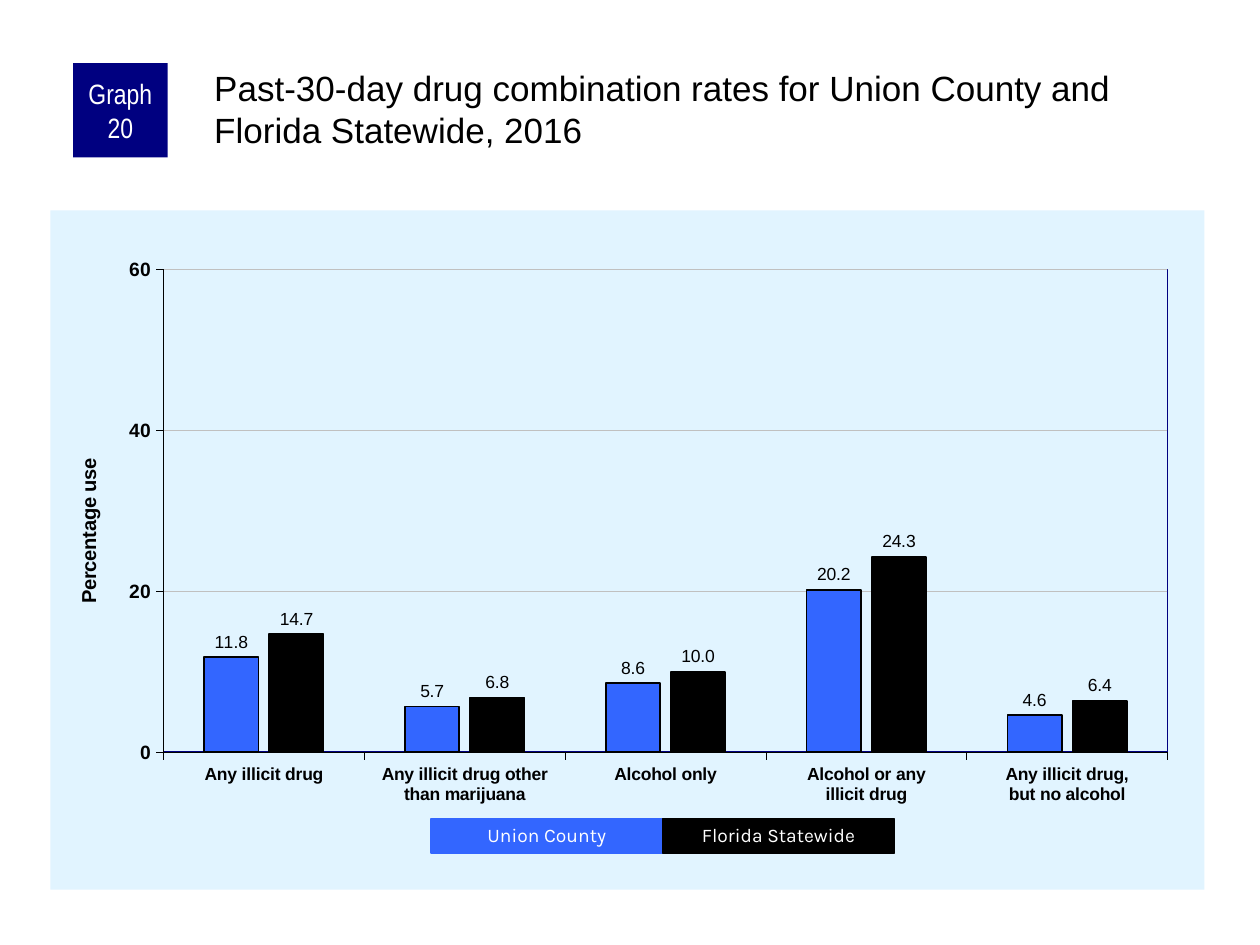
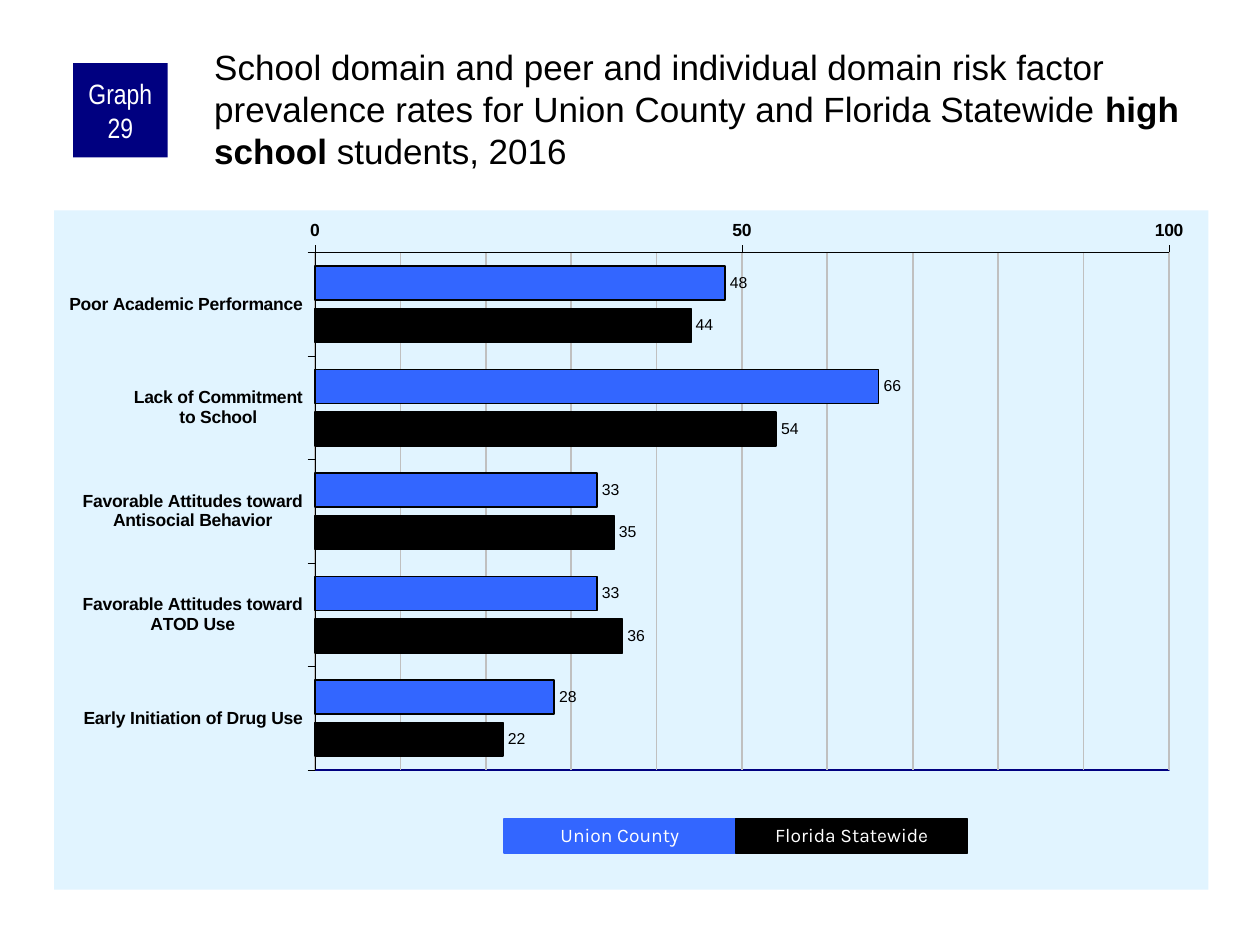
"""Build two survey slides that compare Union County with Florida Statewide."""
from copy import deepcopy
from dataclasses import dataclass

from lxml import etree
from pptx import Presentation
from pptx.chart.data import CategoryChartData
from pptx.dml.color import RGBColor
from pptx.enum.chart import XL_AXIS_CROSSES, XL_CHART_TYPE, XL_LABEL_POSITION, XL_TICK_MARK
from pptx.enum.shapes import MSO_SHAPE
from pptx.enum.text import MSO_ANCHOR, MSO_AUTO_SIZE, PP_ALIGN
from pptx.oxml import parse_xml
from pptx.oxml.ns import qn
from pptx.util import Inches, Pt

COLUMNS = XL_CHART_TYPE.COLUMN_CLUSTERED
BARS = XL_CHART_TYPE.BAR_CLUSTERED
TICK_OUT = XL_TICK_MARK.OUTSIDE
TICK_NONE = XL_TICK_MARK.NONE
OUTSIDE_END = XL_LABEL_POSITION.OUTSIDE_END
AT_MAXIMUM = XL_AXIS_CROSSES.MAXIMUM
RECTANGLE = MSO_SHAPE.RECTANGLE
CENTER, LEFT = PP_ALIGN.CENTER, PP_ALIGN.LEFT
TOP, MIDDLE = MSO_ANCHOR.TOP, MSO_ANCHOR.MIDDLE
NO_FIT = MSO_AUTO_SIZE.NONE
TITLE_ONLY = 5


@dataclass(frozen=True)
class Theme:
    """Colours, fonts and type sizes of the deck."""
    navy: str = "000080"
    county: str = "3366FF"
    black: str = "000000"
    white: str = "FFFFFF"
    panel: str = "E1F4FF"
    grid: str = "C0C0C0"
    font: str = "Arial"
    badge_font: str = "Arial Narrow"
    legend_font: str = "Karla"
    title_size: float = 20
    badge_size: float = 16
    legend_size: float = 11
    chart_size: float = 11.5
    category_size: float = 10


THEME = Theme()
REGIONS = [("Union County", THEME.county), ("Florida Statewide", THEME.black)]
LEGEND_TOP, LEGEND_WIDTH, LEGEND_HEIGHT = 6.5, 1.84, 0.27

GRAPHS = [
    {
        "badge": "Graph 20",
        "title": [("Past-30-day drug combination rates for Union County and "
                   "Florida Statewide, 2016", False)],
        "title_top": 0.5,
        "kind": COLUMNS,
        "chart_left": 0.4,
        "plot": (0.098, 0.087, 0.87, 0.711),
        "rows": [
            ("Any illicit drug", 11.8, 14.7),
            ("Any illicit drug other than marijuana", 5.7, 6.8),
            ("Alcohol only", 8.6, 10.0),
            ("Alcohol or any\nillicit drug", 20.2, 24.3),
            ("Any illicit drug,\nbut no alcohol", 4.6, 6.4),
        ],
        "gap": 150, "overlap": -20,
        "maximum": 60, "step": 20, "minor_step": None, "grid_width": 0.25,
        "axis_title": "Percentage use", "axis_size": 11,
        "label_format": "0.0", "label_size": 10,
        "legend_left": 3.42,
    },
    {
        "badge": "Graph 29",
        "title": [("School domain and peer and individual domain risk factor prevalence "
                   "rates for Union County and Florida Statewide ", False),
                  ("high school", True), (" students, 2016", False)],
        "title_top": 0.33,
        "kind": BARS,
        "chart_left": 0.43,
        "plot": (0.226, 0.062, 0.74, 0.762),
        "rows": [
            ("Poor Academic Performance", 48, 44),
            ("Lack of Commitment\nto School", 66, 54),
            ("Favorable Attitudes toward\nAntisocial Behavior", 33, 35),
            ("Favorable Attitudes toward\nATOD Use", 33, 36),
            ("Early Initiation of Drug Use", 28, 22),
        ],
        "gap": 80, "overlap": -25,
        "maximum": 100, "step": 50, "minor_step": 10, "grid_width": 1,
        "axis_title": None, "axis_size": 10,
        "label_format": "0", "label_size": 9,
        "legend_left": 4,
    },
]


def set_font(font, size, color=THEME.black, name=THEME.font, bold=False):
    font.name, font.size, font.bold = name, Pt(size), bold
    font.color.rgb = RGBColor.from_string(color)


def set_line(line, color, width):
    line.color.rgb = RGBColor.from_string(color)
    line.width = Pt(width)


def set_margins(frame, left, top, right, bottom):
    frame.margin_left, frame.margin_top = Inches(left), Inches(top)
    frame.margin_right, frame.margin_bottom = Inches(right), Inches(bottom)


def chart_properties(fill=None, line=None):
    """Return a chart spPr element with the given fill and outline colours."""
    solid = '<a:solidFill><a:srgbClr val="{}"/></a:solidFill>'
    paint = solid.format(fill) if fill else "<a:noFill/>"
    stroke = solid.format(line) if line else "<a:noFill/>"
    return parse_xml(
        '<c:spPr xmlns:c="http://schemas.openxmlformats.org/drawingml/2006/chart" '
        'xmlns:a="http://schemas.openxmlformats.org/drawingml/2006/main">'
        f'{paint}<a:ln w="12700">{stroke}</a:ln></c:spPr>')


def place_plot(chart, bounds):
    """Fix the inner plot area and paint the panel and the plot border."""
    chart_node = chart.element.find(qn("c:chart"))
    chart_node.addnext(chart_properties(fill=THEME.panel))
    plot_area = chart_node.find(qn("c:plotArea"))
    for old in plot_area.findall(qn("c:layout")):
        plot_area.remove(old)
    layout = etree.Element(qn("c:layout"))
    manual = etree.SubElement(layout, qn("c:manualLayout"))
    settings = [("layoutTarget", "inner"), ("xMode", "edge"), ("yMode", "edge")]
    settings += zip("xywh", bounds)
    for tag, value in settings:
        etree.SubElement(manual, qn(f"c:{tag}")).set("val", str(value))
    plot_area.insert(0, layout)
    plot_area.append(chart_properties(line=THEME.navy))


def add_minor_gridlines(chart, step):
    """Draw minor gridlines in the style of the major ones."""
    chart.value_axis.minor_unit = step
    chart.value_axis.has_minor_gridlines = True
    major = next(chart.element.iter(qn("c:majorGridlines")))
    minor = next(chart.element.iter(qn("c:minorGridlines")))
    minor.append(deepcopy(major.find(qn("c:spPr"))))


def style_axes(chart, graph):
    category, value = chart.category_axis, chart.value_axis
    for axis, size in ((category, THEME.category_size), (value, graph["axis_size"])):
        axis.major_tick_mark, axis.minor_tick_mark = TICK_OUT, TICK_NONE
        set_font(axis.tick_labels.font, size, bold=True)
        set_line(axis.format.line, THEME.black, 0.25)
    value.minimum_scale, value.maximum_scale = 0, graph["maximum"]
    value.major_unit = graph["step"]
    value.has_major_gridlines = True
    set_line(value.major_gridlines.format.line, THEME.grid, graph["grid_width"])
    if graph["minor_step"]:
        add_minor_gridlines(chart, graph["minor_step"])
    if graph["kind"] == BARS:
        category.reverse_order = True
        category.crosses = AT_MAXIMUM
    value.has_title = bool(graph["axis_title"])
    if graph["axis_title"]:
        frame = value.axis_title.text_frame
        frame.text = graph["axis_title"]
        set_font(frame.paragraphs[0].font, THEME.chart_size, bold=True)


def add_rates_chart(slide, graph):
    categories, *values = zip(*graph["rows"])
    data = CategoryChartData()
    data.categories = categories
    for (region, _), rates in zip(REGIONS, values):
        data.add_series(region, rates)
    chart = slide.shapes.add_chart(graph["kind"], Inches(graph["chart_left"]), Inches(1.67),
                                   Inches(9.16), Inches(5.39), data).chart
    chart.has_legend = chart.has_title = False
    set_font(chart.font, THEME.chart_size)
    plot = chart.plots[0]
    plot.vary_by_categories = False
    plot.gap_width, plot.overlap = graph["gap"], graph["overlap"]
    for series, (_, color) in zip(plot.series, REGIONS):
        series.format.fill.solid()
        series.format.fill.fore_color.rgb = RGBColor.from_string(color)
        set_line(series.format.line, THEME.black, 1)
        labels = series.data_labels
        labels.show_value, labels.position = True, OUTSIDE_END
        labels.number_format = graph["label_format"]
        labels.number_format_is_linked = False
        set_font(labels.font, graph["label_size"])
    style_axes(chart, graph)
    place_plot(chart, graph["plot"])


def add_block(slide, text, bounds, fill, size, font):
    """Add a filled rectangle with one centred white paragraph."""
    block = slide.shapes.add_shape(RECTANGLE, *map(Inches, bounds))
    block.shadow.inherit = False
    block.fill.solid()
    block.fill.fore_color.rgb = RGBColor.from_string(fill)
    block.line.fill.background()
    frame = block.text_frame
    frame.word_wrap, frame.vertical_anchor = True, MIDDLE
    set_margins(frame, 0.05, 0, 0.05, 0)
    frame.text = text
    paragraph = frame.paragraphs[0]
    paragraph.alignment = CENTER
    set_font(paragraph.font, size, THEME.white, font)
    return block


def add_title(slide, pieces, top):
    title = slide.shapes.title
    title.left, title.top = Inches(1.67), Inches(top)
    title.width, title.height = Inches(7.92), Inches(0.83)
    frame = title.text_frame
    frame.word_wrap, frame.auto_size, frame.vertical_anchor = True, NO_FIT, TOP
    set_margins(frame, 0.03, 0.03, 0, 0)
    paragraph = frame.paragraphs[0]
    paragraph.alignment = LEFT
    set_font(paragraph.font, THEME.title_size)
    for text, bold in pieces:
        span = paragraph.add_run()
        span.text = text
        if bold:
            span.font.bold = True


def add_legend(slide, left):
    for index, (region, color) in enumerate(REGIONS):
        bounds = (left + index * LEGEND_WIDTH, LEGEND_TOP, LEGEND_WIDTH, LEGEND_HEIGHT)
        block = add_block(slide, region, bounds, color, THEME.legend_size, THEME.legend_font)
        set_line(block.line, color, 0.75)
        block.text_frame.paragraphs[0].line_spacing = 0.9


def main():
    deck = Presentation()
    deck.slide_width, deck.slide_height = Inches(10), Inches(7.5)
    for graph in GRAPHS:
        slide = deck.slides.add_slide(deck.slide_layouts[TITLE_ONLY])
        add_rates_chart(slide, graph)
        add_block(slide, graph["badge"], (0.58, 0.5, 0.75, 0.75), THEME.navy,
                  THEME.badge_size, THEME.badge_font)
        add_title(slide, graph["title"], graph["title_top"])
        add_legend(slide, graph["legend_left"])
    deck.save("out.pptx")


if __name__ == "__main__":
    main()
